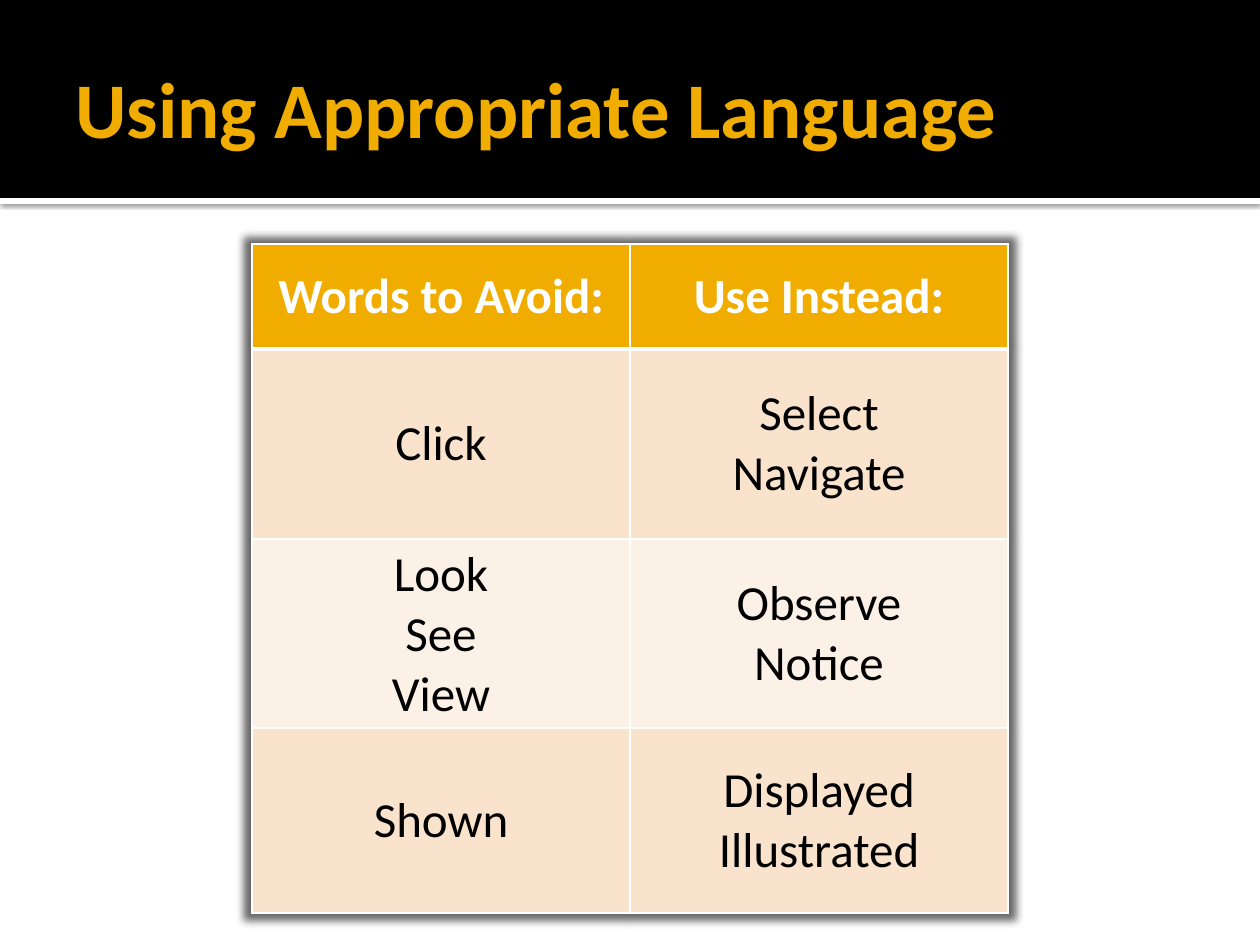
import dataclasses

import lxml.etree
import pptx
import pptx.dml.color
import pptx.enum.shapes
import pptx.enum.text
import pptx.oxml
import pptx.oxml.ns
import pptx.util

SCALE = 914400 / 126
QN = pptx.oxml.ns.qn


@dataclasses.dataclass(frozen=True)
class Theme:
    font: str = "Calibri"
    title_size: int = 45
    cell_size: int = 28
    gold: str = "F0AD00"
    black: str = "000000"
    white: str = "FFFFFF"
    bands: tuple = ("F9E3CC", "FCF1E7")


THEME = Theme()
HEAD = ("Words to Avoid:", "Use Instead:")
WORDS = (
    ("Click", "Select\nNavigate"),
    ("Look\nSee\nView", "Observe\nNotice"),
    ("Shown", "Displayed\nIllustrated"),
)
HEIGHTS = (105, 190, 185, 185)


def px(count):
    return pptx.util.Emu(round(count * SCALE))


def color(code):
    return pptx.dml.color.RGBColor.from_string(code)


def paint(fill, code):
    fill.solid()
    fill.fore_color.rgb = color(code)


def style(para, size, code, bold):
    font = para.font
    font.name = THEME.font
    font.size = pptx.util.Pt(size)
    font.bold = bold
    font.color.rgb = color(code)


def shadow(blur, dist, alpha, grow=100):
    """Return an effect list; blur and dist in points, the rest in percent."""
    return pptx.oxml.parse_xml(
        f'<a:effectLst {pptx.oxml.ns.nsdecls("a")}>'
        f'<a:outerShdw blurRad="{pptx.util.Pt(blur)}" dist="{pptx.util.Pt(dist)}" '
        f'dir="5400000" sx="{grow * 1000}" sy="{grow * 1000}" algn="ctr" rotWithShape="0">'
        f'<a:srgbClr val="{THEME.black}"><a:alpha val="{alpha * 1000}"/></a:srgbClr>'
        f'</a:outerShdw></a:effectLst>'
    )


def add_band(slide, top, height, code):
    band = slide.shapes.add_shape(
        pptx.enum.shapes.MSO_SHAPE.RECTANGLE, 0, px(top), px(1260), px(height)
    )
    band.shadow.inherit = False
    paint(band.fill, code)
    band.line.fill.background()
    return band


def add_title(slide, text):
    box = slide.shapes.add_textbox(px(63), px(21), px(1134), px(173))
    frame = box.text_frame
    frame.word_wrap = True
    frame.vertical_anchor = pptx.enum.text.MSO_ANCHOR.MIDDLE
    frame.text = text
    style(frame.paragraphs[0], THEME.title_size, THEME.gold, True)


def add_edge(cell, side, width):
    props = cell._tc.get_or_add_tcPr()
    line = lxml.etree.SubElement(props, QN(f"a:ln{side}"), w=str(pptx.util.Pt(width)))
    fill = lxml.etree.SubElement(line, QN("a:solidFill"))
    lxml.etree.SubElement(fill, QN("a:srgbClr"), val=THEME.white)


def fill_cell(cell, text, row):
    head = row == 0
    cell.text = text
    cell.vertical_anchor = pptx.enum.text.MSO_ANCHOR.MIDDLE
    for para in cell.text_frame.paragraphs:
        para.alignment = pptx.enum.text.PP_ALIGN.CENTER
        style(para, THEME.cell_size, THEME.white if head else THEME.black, head)
    add_edge(cell, "L", 1)
    add_edge(cell, "R", 1)
    add_edge(cell, "T", 3 if row == 1 else 1)
    add_edge(cell, "B", 3 if head else 1)
    paint(cell.fill, THEME.gold if head else THEME.bands[(row - 1) % 2])


def add_words(slide):
    rows = (HEAD, *WORDS)
    frame = slide.shapes.add_table(
        len(rows), len(HEAD), px(252), px(244), px(756), px(sum(HEIGHTS))
    )
    table = frame.table
    table._tbl.tblPr.insert(0, shadow(5, 0, 60, 102))
    for row, texts in enumerate(rows):
        table.rows[row].height = px(HEIGHTS[row])
        for col, text in enumerate(texts):
            fill_cell(table.cell(row, col), text, row)


def main():
    deck = pptx.Presentation()
    deck.slide_width, deck.slide_height = px(1260), px(945)
    slide = deck.slides.add_slide(deck.slide_layouts[6])
    strip = add_band(slide, 198, 6, THEME.white)
    strip.shadow.inherit = True
    strip._element.spPr.append(shadow(2.5, 0.8, 60))
    add_band(slide, 0, 198, THEME.black)
    add_title(slide, "Using Appropriate Language")
    add_words(slide)
    deck.save("out.pptx")


if __name__ == "__main__":
    main()
